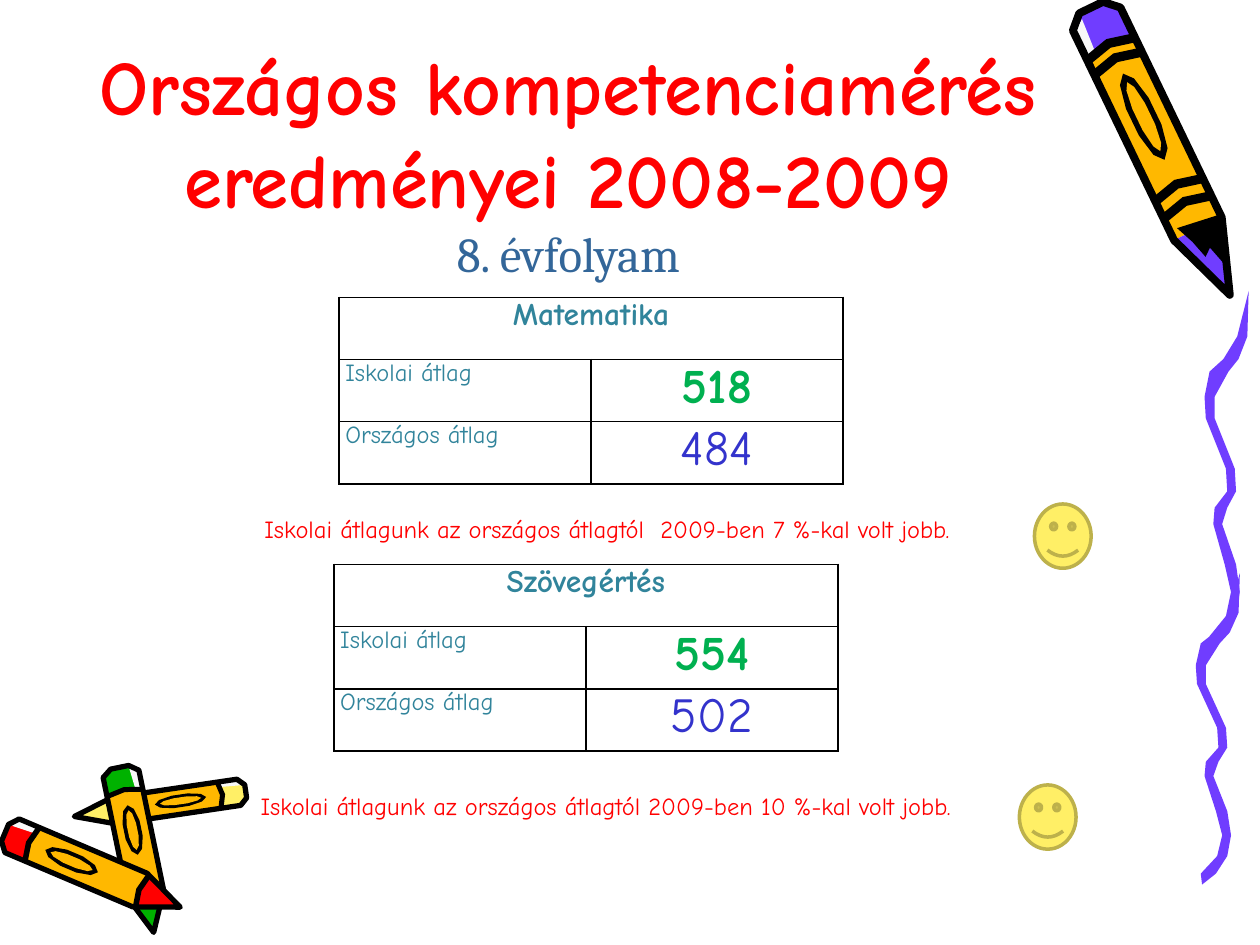
"""Build the slide of national competence test results for grade 8."""
from math import cos, hypot, pi, sin
from typing import NamedTuple, Optional

from lxml.etree import SubElement
from pptx import Presentation
from pptx.dml.color import RGBColor
from pptx.enum.shapes import MSO_SHAPE
from pptx.enum.text import MSO_ANCHOR, MSO_AUTO_SIZE, PP_ALIGN
from pptx.oxml.ns import qn
from pptx.shapes.autoshape import Shape
from pptx.shapes.shapetree import GroupShapes, SlideShapes
from pptx.slide import Slide
from pptx.table import _Cell
from pptx.text.text import _Paragraph
from pptx.util import Inches, Pt

BLACK = RGBColor(0x00, 0x00, 0x00)
PURPLE = RGBColor(0x70, 0x3D, 0xFF)
ORANGE = RGBColor(0xFF, 0xB8, 0x00)
PALE = RGBColor(0xF8, 0xF8, 0xF8)
YELLOW = RGBColor(0xFF, 0xEF, 0x66)
OLIVE = RGBColor(0xBD, 0xB1, 0x4B)
RED = RGBColor(0xFF, 0x00, 0x00)
CRAYON_GREEN = RGBColor(0x00, 0xB2, 0x00)
SCORE_GREEN = RGBColor(0x00, 0xB0, 0x50)
SCORE_BLUE = RGBColor(0x33, 0x33, 0xCC)
TEAL = RGBColor(0x31, 0x84, 0x9B)
STEEL = RGBColor(0x33, 0x66, 0x99)
COMIC = "Comic Neue"
SERIF = "Cambria"

Point = tuple[float, float]


class Crayon(NamedTuple):
    """A crayon from its blunt end to its tip, in inches, with bands as fractions of its length."""
    blunt: Point
    tip: Point
    width: float
    color: RGBColor
    bands: tuple[float, ...]
    edge: float
    highlight_side: int
    shaded: bool = False

    def locate(self, along: float, across: float) -> Point:
        """Turn fractions of length and width into a point on the slide."""
        run, rise = self.tip[0] - self.blunt[0], self.tip[1] - self.blunt[1]
        offset = across * self.width / hypot(run, rise)
        return (self.blunt[0] + along * run + offset * rise,
                self.blunt[1] + along * rise - offset * run)


class Station(NamedTuple):
    """The left and right edge of the ribbon at one depth."""
    depth: float
    left: float
    right: float


class Result(NamedTuple):
    """One subject with its table, caption and smiley positions in inches."""
    subject: str
    school: str
    country: str
    table_left: float
    table_top: float
    caption: str
    caption_left: float
    caption_top: float
    caption_width: float
    smiley_left: float
    smiley_top: float


BODY_START, BODY_END = 0.14, 0.77
LABEL_CENTER, LABEL_LENGTH, LABEL_WIDTH = 0.38, 0.15, 0.25
CAP = [(0.04, -0.5), (0, -0.25), (0, 0.25), (0.04, 0.5), (BODY_START, 0.5), (BODY_START, -0.5)]
BODY = [(BODY_START, -0.5), (BODY_START, 0.5), (BODY_END, 0.5), (BODY_END, -0.5)]
CONE = [(BODY_END, -0.5), (BODY_END, 0.5), (1, 0)]
SILHOUETTE = CAP[:4] + [(BODY_END, 0.5), (1, 0), (BODY_END, -0.5)]
CONE_SHADE = [(0.74, -0.35), (0.76, 0.5), (0.93, 0.2), (0.84, 0.05), (0.86, -0.1), (0.8, -0.2)]
CRAYONS = [
    Crayon((1.95, 6.28), (0.59, 6.48), 0.21, YELLOW, (BODY_START, BODY_END), 3, -1),
    Crayon((0.95, 6.09), (1.22, 7.4), 0.29, CRAYON_GREEN, (BODY_START,), 3, 1),
    Crayon((0.04, 6.61), (1.43, 7.2), 0.29, RED, (BODY_START, BODY_END), 3, 1),
    Crayon((8.66, 0.06), (9.76, 2.34), 0.42, PURPLE, (0.13, 0.18, 0.62, 0.68), 4.5, -1, True),
]
RIBBON = [Station(*row) for row in (
    (0, 0.35, 0.35), (0.36, 0.26, 0.34), (0.54, 0.15, 0.27), (0.64, 0.04, 0.19), (0.84, 0, 0.08),
    (1.01, 0.01, 0.08), (1.41, 0.17, 0.24), (1.59, 0.18, 0.25), (1.72, 0.08, 0.18), (1.85, 0.07, 0.14),
    (2.17, 0.16, 0.25), (2.39, 0.21, 0.28), (2.58, 0.17, 0.25), (2.74, 0.04, 0.16), (2.84, 0.05, 0.05))]
RESULTS = [
    Result("Matematika", "518", "484", 2.69, 2.36,
           "Iskolai átlagunk az országos átlagtól  2009-ben 7 %-kal volt jobb.", 2, 4.03, 6.13, 8.21, 4),
    Result("Szövegértés", "554", "502", 2.65, 4.48,
           "Iskolai átlagunk az országos átlagtól 2009-ben 10 %-kal volt jobb.", 1.97, 6.23, 6.16, 8.09, 6.23),
]


def draw_polygon(shapes: GroupShapes, points: list[Point], color: Optional[RGBColor], edge: float = 0) -> Shape:
    """Draw a polygon with an optional fill and an optional black edge."""
    start, *others = [(Inches(x), Inches(y)) for x, y in points]
    builder = shapes.build_freeform(*start)
    builder.add_line_segments(others, close=True)
    polygon = builder.convert_to_shape()
    polygon.shadow.inherit = False
    if color is None:
        polygon.fill.background()
    else:
        polygon.fill.solid()
        polygon.fill.fore_color.rgb = color
    if edge:
        polygon.line.color.rgb = BLACK
        polygon.line.width = Pt(edge)
    else:
        polygon.line.fill.background()
    return polygon


def label_ring(scale_along: float, scale_across: float) -> list[Point]:
    """Return an oval around the label centre in crayon fractions."""
    angles = [2 * pi * step / 10 for step in range(10)]
    return [(LABEL_CENTER + scale_along * LABEL_LENGTH * cos(angle),
             scale_across * LABEL_WIDTH * sin(angle)) for angle in angles]


def band_strip(along: float) -> list[Point]:
    """Return a bowed strip across the crayon in crayon fractions."""
    bow, thickness = 0.02, 0.03
    return [(along, -0.5), (along - bow, 0), (along, 0.5),
            (along + thickness, 0.5), (along + thickness - bow, 0), (along + thickness, -0.5)]


def draw_crayon(slide: Slide, crayon: Crayon) -> None:
    """Draw one crayon as a group of parts from back to front."""
    shapes = slide.shapes.add_group_shape().shapes
    side = crayon.highlight_side
    highlight = [(0.02, 0.25 * side), (0.05, 0.5 * side), (BODY_START, 0.5 * side), (BODY_START, 0.3 * side)]
    parts = [(CAP, crayon.color), (highlight, PALE), (BODY, ORANGE), (CONE, crayon.color),
             (label_ring(1, 1), BLACK), (label_ring(0.8, 0.55), ORANGE)]
    parts += [(band_strip(along), BLACK) for along in crayon.bands]
    if crayon.shaded:
        parts.append((CONE_SHADE, BLACK))
    for corners, color in parts:
        draw_polygon(shapes, [crayon.locate(*corner) for corner in corners], color)
    draw_polygon(shapes, [crayon.locate(*corner) for corner in SILHOUETTE], None, crayon.edge)


def draw_ribbon(shapes: GroupShapes, left: float, top: float, stretch: float) -> None:
    """Draw the wavy crayon stroke at a position and vertical stretch."""
    down = [(left + station.left, top + stretch * station.depth) for station in RIBBON]
    back = [(left + station.right, top + stretch * station.depth) for station in RIBBON[-2:0:-1]]
    draw_polygon(shapes, down + back, PURPLE)


def write(para: _Paragraph, text: str, size: float, color: RGBColor, bold: bool = False,
          align: PP_ALIGN = PP_ALIGN.CENTER, face: str = COMIC) -> None:
    """Fill a paragraph with formatted text."""
    para.text, para.alignment = text, align
    para.font.size, para.font.name, para.font.bold = Pt(size), face, bold
    para.font.color.rgb = color


def format_cell(cell: _Cell) -> None:
    """Clear the fill, tighten the margins and draw four thin black borders."""
    cell.margin_left = cell.margin_right = Inches(0.05)
    cell.margin_top = cell.margin_bottom = 0
    properties = cell._tc.get_or_add_tcPr()
    for side in ("a:lnL", "a:lnR", "a:lnT", "a:lnB"):
        border = SubElement(properties, qn(side), w=str(Pt(1)))
        SubElement(SubElement(border, qn("a:solidFill")), qn("a:srgbClr"), val=str(BLACK))
    cell.fill.background()


def draw_table(shapes: SlideShapes, result: Result) -> None:
    """Draw the score table of one subject."""
    table = shapes.add_table(3, 2, Inches(result.table_left), Inches(result.table_top),
                             Inches(4), Inches(1.48)).table
    table.first_row = table.horz_banding = False
    for row in table.rows:
        row.height = Inches(1.48 / 3)
        for cell in row.cells:
            format_cell(cell)
    table.cell(0, 0).merge(table.cell(0, 1))
    write(table.cell(0, 0).text_frame.paragraphs[0], result.subject, 18, TEAL, bold=True)
    scores = [("Iskolai átlag", result.school, SCORE_GREEN, True),
              ("Országos átlag", result.country, SCORE_BLUE, False)]
    for index, (label, score, color, bold) in enumerate(scores, start=1):
        write(table.cell(index, 0).text_frame.paragraphs[0], label, 14, TEAL, align=PP_ALIGN.LEFT)
        write(table.cell(index, 1).text_frame.paragraphs[0], score, 28, color, bold)


def draw_result(shapes: SlideShapes, result: Result) -> None:
    """Draw the table, caption and smiley of one subject."""
    draw_table(shapes, result)
    box = shapes.add_textbox(Inches(result.caption_left), Inches(result.caption_top),
                             Inches(result.caption_width), Inches(0.33))
    box.text_frame.word_wrap = False
    box.text_frame.auto_size = MSO_AUTO_SIZE.SHAPE_TO_FIT_TEXT
    box.text_frame.vertical_anchor = MSO_ANCHOR.MIDDLE
    write(box.text_frame.paragraphs[0], result.caption, 14, RED, align=PP_ALIGN.LEFT)
    smiley = shapes.add_shape(MSO_SHAPE.SMILEY_FACE, Inches(result.smiley_left), Inches(result.smiley_top),
                              Inches(0.45), Inches(0.51))
    smiley.shadow.inherit = False
    smiley.fill.solid()
    smiley.fill.fore_color.rgb = YELLOW
    smiley.line.color.rgb = OLIVE
    smiley.line.width = Pt(2)


def place_title(slide: Slide) -> None:
    """Move the title placeholder and write its two paragraphs."""
    title = slide.shapes.title
    title.left, title.top, title.width, title.height = map(Inches, (0.19, 0.26, 8.64, 2.03))
    frame = title.text_frame
    frame.auto_size, frame.vertical_anchor = MSO_AUTO_SIZE.NONE, MSO_ANCHOR.MIDDLE
    write(frame.paragraphs[0], "Országos kompetenciamérés eredményei 2008-2009", 44, RED, bold=True)
    write(frame.add_paragraph(), "8. évfolyam", 28, STEEL, face=SERIF)


def main() -> None:
    """Build and save the deck."""
    deck = Presentation()
    deck.slide_width, deck.slide_height = Inches(10), Inches(7.5)
    slide = deck.slides.add_slide(deck.slide_layouts[5])
    place_title(slide)
    ribbons = slide.shapes.add_group_shape().shapes
    draw_ribbon(ribbons, 9.49, 4.55, 0.87)
    draw_ribbon(ribbons, 9.56, 2.31, 1)
    for crayon in CRAYONS:
        draw_crayon(slide, crayon)
    for result in RESULTS:
        draw_result(slide.shapes, result)
    deck.save("out.pptx")


if __name__ == "__main__":
    main()
